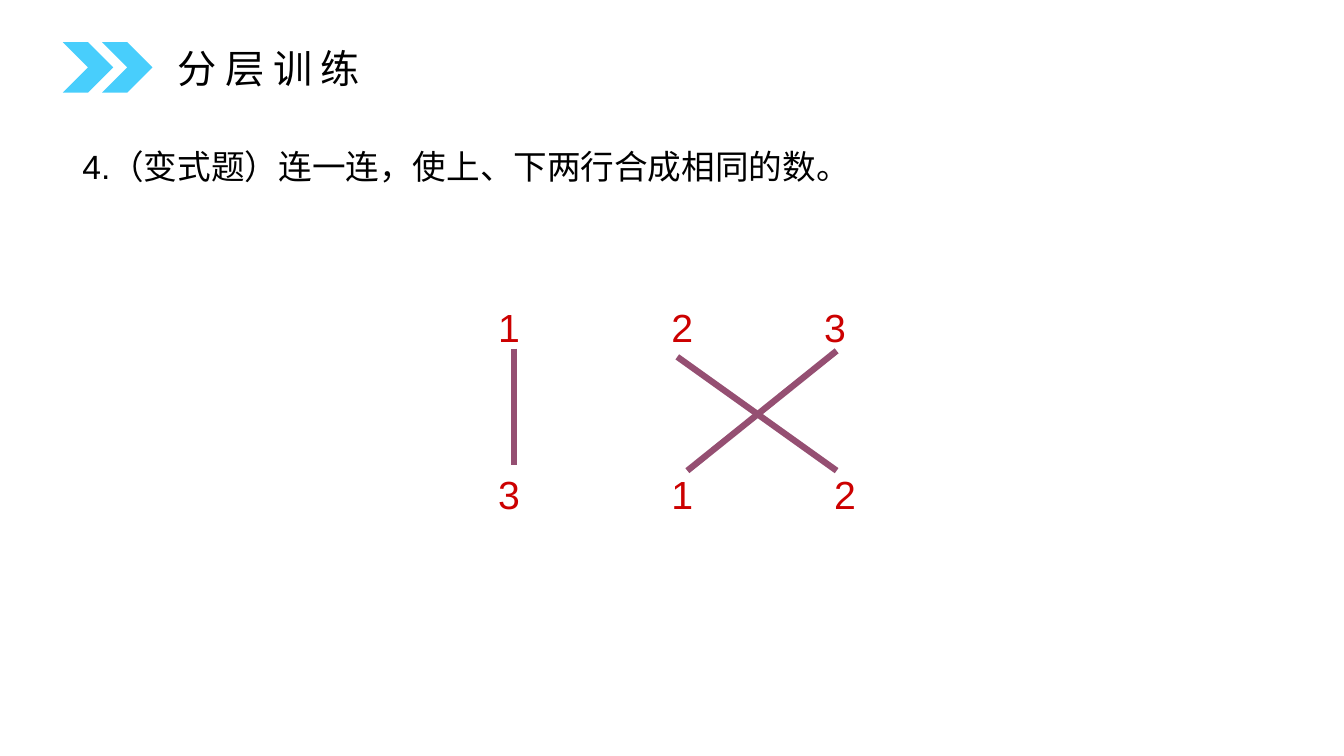
import pptx
import pptx.dml.color
import pptx.enum.shapes
import pptx.enum.text
import pptx.util
from lxml import etree

Pt = pptx.util.Pt
RGBColor = pptx.dml.color.RGBColor
PP_ALIGN = pptx.enum.text.PP_ALIGN

BLACK = RGBColor(0x00, 0x00, 0x00)
RED = RGBColor(0xCC, 0x00, 0x00)
SKY = RGBColor(0x48, 0xCE, 0xFC)
PLUM = RGBColor(0x95, 0x4F, 0x72)

HEADING = "分 层 训 练"
QUESTION = "4.（变式题）连一连，使上、下两行合成相同的数。"

# Each row: top edge, then (digit, centre x)
NUMBER_ROWS = [
    (213.1, [("1", 363.6), ("2", 487.4), ("3", 596.4)]),
    (331.9, [("3", 363.6), ("1", 487.4), ("2", 603.6)]),
]
NUMBER_WIDTH, NUMBER_HEIGHT = 40, 41

# Start x, start y, end x, end y
MATCHES = [
    (367.2, 249.1, 367.2, 331.9),
    (483.8, 254.9, 597.6, 336.2),
    (597.6, 250.6, 491, 336.2),
]

CHEVRON_LEFT, CHEVRON_TOP, CHEVRON_SIZE, CHEVRON_STEP = 44.9, 30.2, 36, 28

presentation = pptx.Presentation()
presentation.slide_width = Pt(960)
presentation.slide_height = Pt(540)
slide = presentation.slides.add_slide(presentation.slide_layouts[6])


def add_text(text, left, top, width, height, size, color, alignment=PP_ALIGN.LEFT):
    box = slide.shapes.add_textbox(Pt(left), Pt(top), Pt(width), Pt(height))
    frame = box.text_frame
    frame.word_wrap = True
    frame.vertical_anchor = pptx.enum.text.MSO_ANCHOR.MIDDLE
    frame.text = text
    paragraph = frame.paragraphs[0]
    paragraph.alignment = alignment
    font = paragraph.runs[0].font
    font.name = "Arial"
    font.size = Pt(size)
    font.color.rgb = color


def add_match(start_x, start_y, end_x, end_y):
    line = slide.shapes.add_connector(
        pptx.enum.shapes.MSO_CONNECTOR.STRAIGHT,
        Pt(start_x), Pt(start_y), Pt(end_x), Pt(end_y))
    line.line.color.rgb = PLUM
    line.line.width = Pt(4.5)
    etree.SubElement(line._element.spPr, pptx.oxml.ns.qn("a:effectLst"))


for index in range(2):
    chevron = slide.shapes.add_shape(
        pptx.enum.shapes.MSO_SHAPE.CHEVRON,
        Pt(CHEVRON_LEFT + index * CHEVRON_STEP), Pt(CHEVRON_TOP),
        Pt(CHEVRON_SIZE), Pt(CHEVRON_SIZE))
    chevron.shadow.inherit = False
    chevron.fill.solid()
    chevron.fill.fore_color.rgb = SKY
    chevron.line.fill.background()

add_text(QUESTION, 51.8, 100.8, 578.2, 36, 24, BLACK)

for top, numbers in NUMBER_ROWS:
    for digit, center in numbers:
        add_text(digit, center - NUMBER_WIDTH / 2, top, NUMBER_WIDTH,
                 NUMBER_HEIGHT, 28, RED, PP_ALIGN.CENTER)

for match in MATCHES:
    add_match(*match)

add_text(HEADING, 119.5, 31.7, 402.5, 33.1, 28, BLACK)

presentation.save("out.pptx")
